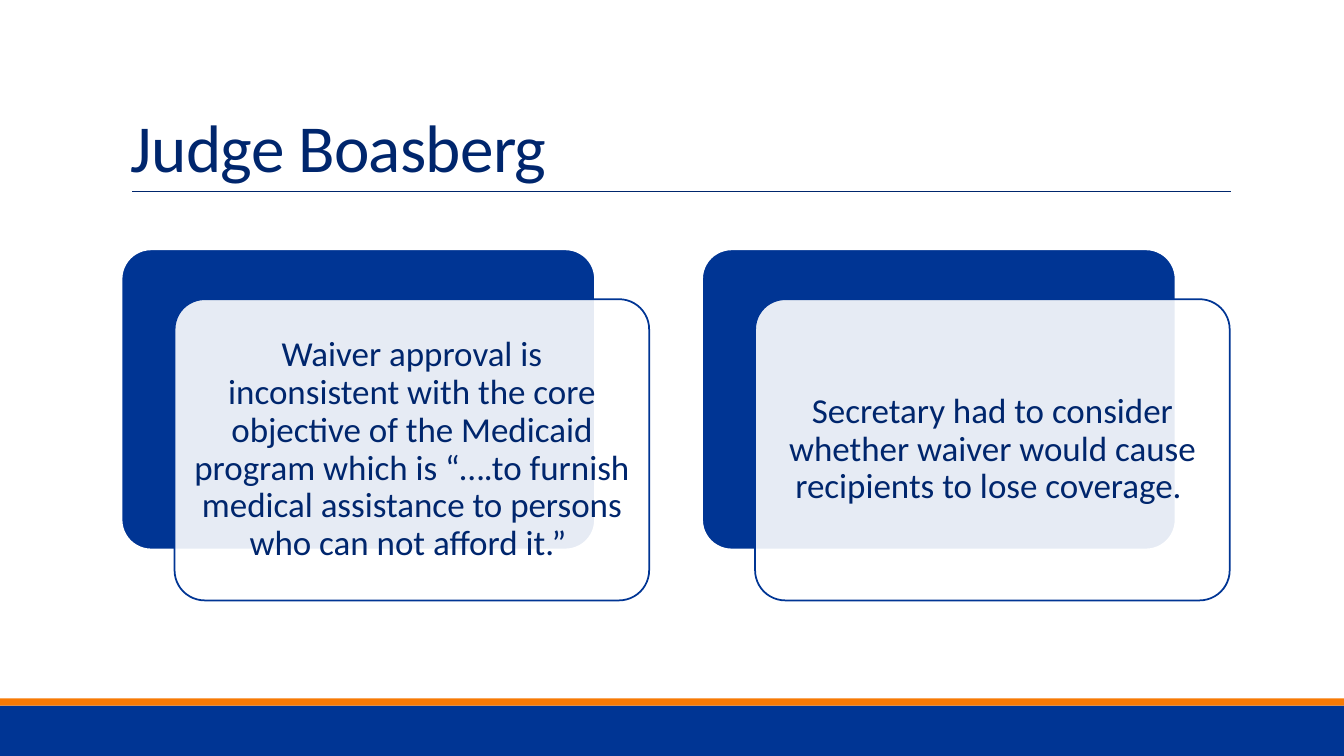
from dataclasses import dataclass

from lxml import etree
from pptx import Presentation
from pptx.dml.color import RGBColor
from pptx.enum.shapes import MSO_CONNECTOR, MSO_SHAPE
from pptx.enum.text import MSO_ANCHOR, PP_ALIGN
from pptx.oxml.ns import qn
from pptx.shapes.autoshape import Shape
from pptx.slide import Slide
from pptx.util import Cm, Pt

RECT, ROUNDED = MSO_SHAPE.RECTANGLE, MSO_SHAPE.ROUNDED_RECTANGLE
STRAIGHT = MSO_CONNECTOR.STRAIGHT
LEFT, CENTER = PP_ALIGN.LEFT, PP_ALIGN.CENTER
MIDDLE, BOTTOM = MSO_ANCHOR.MIDDLE, MSO_ANCHOR.BOTTOM


@dataclass(frozen=True)
class Theme:
    font: str = "Calibri"
    blue: str = "003594"
    navy: str = "00266D"
    orange: str = "F77A05"
    white: str = "FFFFFF"
    title_size: float = 48
    card_size: float = 25


@dataclass(frozen=True)
class Box:
    """Position and size in centimetres."""
    x: float
    y: float
    w: float
    h: float

    def moved(self, dx: float, dy: float) -> "Box":
        return Box(self.x + dx, self.y + dy, self.w, self.h)

    def lengths(self) -> tuple[Cm, Cm, Cm, Cm]:
        return Cm(self.x), Cm(self.y), Cm(self.w), Cm(self.h)


THEME = Theme()
SLIDE_W, SLIDE_H = 33.87, 19.05
TITLE = Box(3.05, 0.79, 27.94, 4.04)
RULE_LEFT, RULE_RIGHT, RULE_Y = 3.33, 31.01, 4.83
FOOTER = Box(0, 17.78, SLIDE_W, 1.27)
STRIPE = Box(0, 17.6, SLIDE_W, 0.18)
FIRST_CARD = Box(3.05, 6.27, 11.96, 7.59)
CARD_PITCH = 14.63
FRONT_DX, FRONT_DY = 1.35, 1.27
CARD_INSET = 0.24
CARDS = (
    "Waiver approval is inconsistent with the core objective of the Medicaid "
    "program which is “….to furnish medical assistance to persons who can not "
    "afford it.” ",
    "Secretary had to consider whether waiver would cause recipients to lose "
    "coverage. ",
)


def rgb(color: str) -> RGBColor:
    return RGBColor.from_string(color)


def add_block(s: Slide, box: Box, fill: str, *, line: str = "",
              line_width: float = 0, alpha: int = 100,
              rounded: bool = False) -> Shape:
    """Add a filled rectangle; alpha is the opacity in percent."""
    sp = s.shapes.add_shape(ROUNDED if rounded else RECT, *box.lengths())
    sp.shadow.inherit = False
    if rounded:
        sp.adjustments[0] = 0.1
    sp.fill.solid()
    sp.fill.fore_color.rgb = rgb(fill)
    if alpha < 100:
        color = sp.fill._xPr.find(qn("a:solidFill"))[0]
        etree.SubElement(color, qn("a:alpha")).set("val", str(alpha * 1000))
    if line:
        sp.line.color.rgb = rgb(line)
        sp.line.width = Pt(line_width)
    else:
        sp.line.fill.background()
    return sp


def write(sp: Shape, text: str, *, size: float, align: PP_ALIGN,
          anchor: MSO_ANCHOR, line_spacing: float, tracking: float = 0,
          inset: float | None = None) -> None:
    """Fill a shape with one paragraph; tracking is in points, inset in cm."""
    tf = sp.text_frame
    tf.word_wrap = True
    tf.vertical_anchor = anchor
    if inset is not None:
        tf.margin_left = tf.margin_right = Cm(inset)
        tf.margin_top = tf.margin_bottom = Cm(inset)
    p = tf.paragraphs[0]
    p.alignment = align
    p.line_spacing = line_spacing
    r = p.add_run()
    r.text = text
    r.font.name = THEME.font
    r.font.size = Pt(size)
    r.font.color.rgb = rgb(THEME.navy)
    if tracking:
        r.font._element.set("spc", str(round(tracking * 100)))


def add_title(s: Slide, text: str) -> None:
    rule = s.shapes.add_connector(STRAIGHT, Cm(RULE_LEFT), Cm(RULE_Y),
                                  Cm(RULE_RIGHT), Cm(RULE_Y))
    rule.line.color.rgb = rgb(THEME.navy)
    rule.line.width = Pt(0.5)
    etree.SubElement(rule._element.spPr, qn("a:effectLst"))
    write(s.shapes.add_textbox(*TITLE.lengths()), text, size=THEME.title_size,
          align=LEFT, anchor=BOTTOM, line_spacing=0.85, tracking=-0.5)


def add_card(s: Slide, box: Box, text: str) -> None:
    """Add a blue card with a translucent text card offset in front of it."""
    add_block(s, box, THEME.blue, line=THEME.white, line_width=2, rounded=True)
    front = add_block(s, box.moved(FRONT_DX, FRONT_DY), THEME.white,
                      line=THEME.blue, line_width=1.25, alpha=90, rounded=True)
    write(front, text, size=THEME.card_size, align=CENTER, anchor=MIDDLE,
          line_spacing=0.9, inset=CARD_INSET)


def main() -> None:
    prs = Presentation()
    prs.slide_width, prs.slide_height = Cm(SLIDE_W), Cm(SLIDE_H)
    s = prs.slides.add_slide(prs.slide_layouts[6])
    add_block(s, FOOTER, THEME.blue)
    add_block(s, STRIPE, THEME.orange)
    add_title(s, "Judge Boasberg")
    for i, text in enumerate(CARDS):
        add_card(s, FIRST_CARD.moved(i * CARD_PITCH, 0), text)
    prs.save("out.pptx")


if __name__ == "__main__":
    main()
